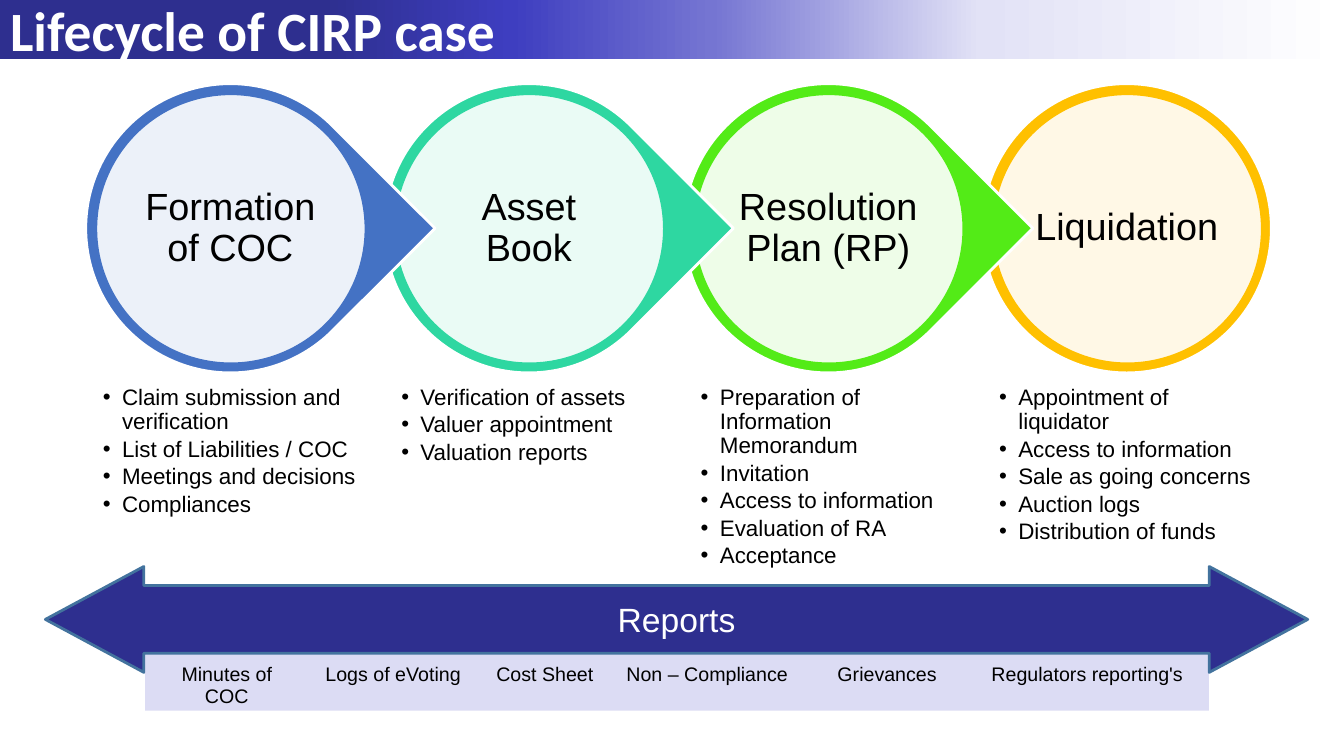
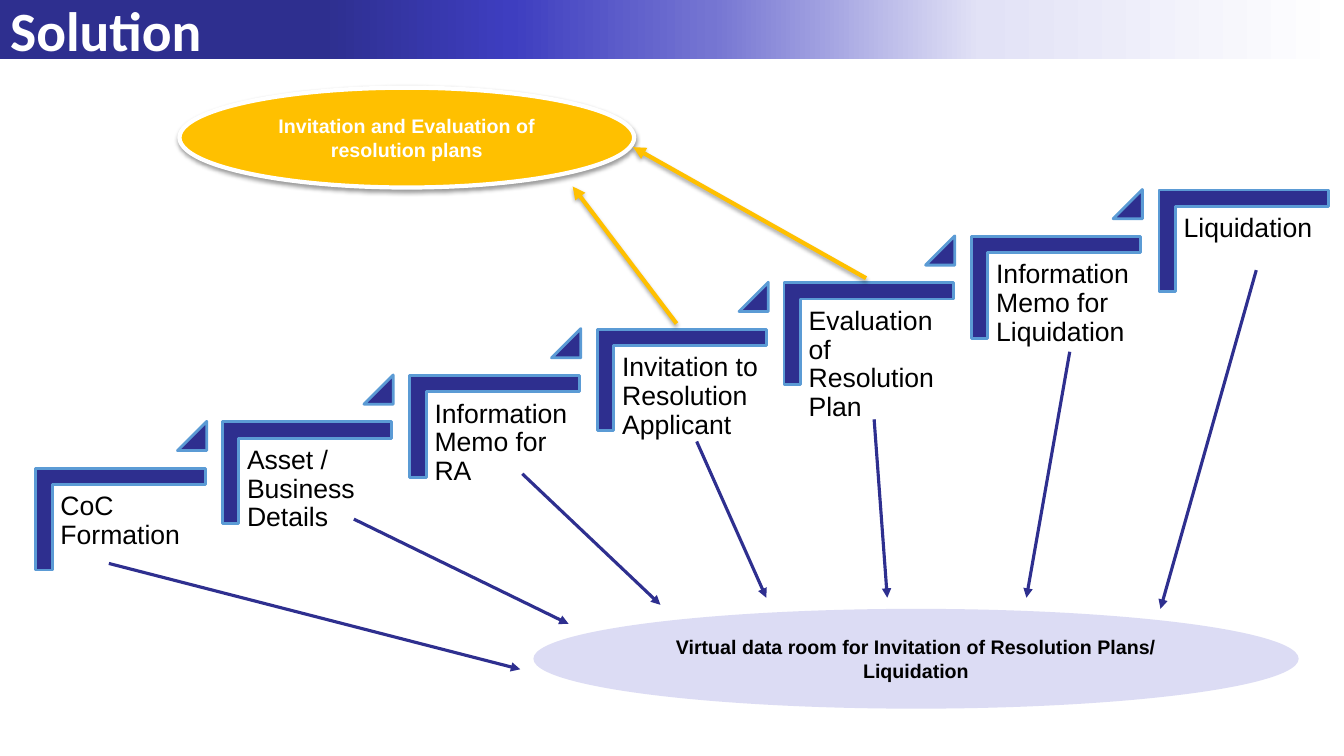
import lxml.etree
import pptx
import pptx.dml.color
import pptx.enum.shapes
import pptx.enum.text
import pptx.oxml.ns
import pptx.util

SHAPES = pptx.enum.shapes.MSO_SHAPE
ALIGN = pptx.enum.text.PP_ALIGN
ANCHOR = pptx.enum.text.MSO_ANCHOR
NAVY, LILAC, GOLD = "2E2F8F", "DCDCF4", "FFC000"
WHITE, BLACK, SKY = "FFFFFF", "000000", "5B9BD5"


def px(length):
    return pptx.util.Emu(length * 9144)


def colour(code):
    return pptx.dml.color.RGBColor.from_string(code)


def add_xml(parent, tag, **attributes):
    return lxml.etree.SubElement(parent, pptx.oxml.ns.qn(tag), attributes)


class Deck:
    body_font = "Arial"
    title_font = "Calibri"
    band_stops = [(0, WHITE), (27, "E2E2F6"), (47, "7575D2"),
                  (62, "3E3EC0"), (76, NAVY), (100, NAVY)]
    no_grid = "{2D5ABB26-0587-4C30-8999-92F81FD0307C}"

    def __init__(self):
        self.deck = pptx.Presentation()
        self.deck.slide_width = px(1333)
        self.deck.slide_height = px(750)
        self.page = None

    def add_page(self, layout, title):
        self.page = self.deck.slides.add_slide(self.deck.slide_layouts.get_by_name(layout))
        if len(self.deck.slides) == 1:
            self.add_master_band()
        box = self.page.shapes.title
        self.place(box, 0, 0, 1185, 66)
        self.set_text(box.text_frame, [title], 39.6, WHITE, bold=True, font=self.title_font,
                      anchor=ANCHOR.MIDDLE, inset=(10, 5), spacing=0.9)

    def add_master_band(self):
        band = self.add_shape(SHAPES.RECTANGLE, 0, 0, 1333, 59, NAVY)
        band.fill.gradient()
        band.fill.gradient_angle = 180
        stops = next(band.element.iter(pptx.oxml.ns.qn("a:gsLst")))
        stops.clear()
        for position, code in self.band_stops:
            stop = add_xml(stops, "a:gs", pos=str(position * 1000))
            add_xml(stop, "a:srgbClr", val=code)
        self.deck.slide_master.shapes.element.insert(2, band.element)

    def place(self, box, left, top, width, height):
        box.left, box.top, box.width, box.height = map(px, (left, top, width, height))

    def set_text(self, frame, texts, size, code=BLACK, bold=False, font=body_font,
                 align=ALIGN.LEFT, anchor=ANCHOR.TOP, inset=(10, 5), spacing=1.0,
                 after=0, bullet=False):
        frame.word_wrap = True
        frame.auto_size = pptx.enum.text.MSO_AUTO_SIZE.NONE
        frame.vertical_anchor = anchor
        frame.margin_left = frame.margin_right = px(inset[0])
        frame.margin_top = frame.margin_bottom = px(inset[1])
        for index, text in enumerate(texts):
            para = frame.add_paragraph() if index else frame.paragraphs[0]
            self.set_para(para, text, size, code, bold, font, align)
            para.line_spacing = spacing
            para.space_before = pptx.util.Pt(0)
            para.space_after = pptx.util.Pt(after)
            if bullet:
                properties = para._p.get_or_add_pPr()
                properties.set("marL", str(px(19)))
                properties.set("indent", str(px(-19)))
                add_xml(properties, "a:buChar", char="•")

    def set_para(self, para, text, size, code, bold, font, align):
        para.alignment = align
        span = para.add_run()
        span.text = text
        span.font.name = font
        span.font.size = pptx.util.Pt(size)
        span.font.bold = bold
        span.font.color.rgb = colour(code)

    def add_shape(self, kind, left, top, width, height, fill, line=None, weight=2,
                  turn=0, adjust=(), alpha=None):
        box = self.page.shapes.add_shape(kind, *map(px, (left, top, width, height)))
        box.shadow.inherit = False
        box.rotation = turn
        for index, value in enumerate(adjust):
            box.adjustments[index] = value
        box.fill.solid()
        box.fill.fore_color.rgb = colour(fill)
        if alpha:
            code = box.element.spPr.find(".//" + pptx.oxml.ns.qn("a:srgbClr"))
            add_xml(code, "a:alpha", val=str(alpha * 1000))
        if line:
            box.line.color.rgb = colour(line)
            box.line.width = pptx.util.Pt(weight)
        else:
            box.line.fill.background()
        return box

    def add_label(self, left, top, width, height, text, size, **style):
        box = self.page.shapes.add_textbox(*map(px, (left, top, width, height)))
        self.set_text(box.text_frame, [text], size, spacing=0.9, **style)

    def add_list(self, box, left, top, width, height, items):
        self.place(box, left, top, width, height)
        self.set_text(box.text_frame, items, 16, inset=(7, 7), spacing=0.9,
                      after=2.4, bullet=True)

    def add_caption(self, box, text, size, code, bold=False):
        self.set_text(box.text_frame, [text], size, code, bold,
                      align=ALIGN.CENTER, anchor=ANCHOR.MIDDLE)

    def add_row(self, left, top, height, widths, texts):
        frame = self.page.shapes.add_table(
            1, len(texts), *map(px, (left, top, sum(widths), height)))
        table = frame.table
        table.first_row = table.horz_banding = False
        next(frame.element.iter(pptx.oxml.ns.qn("a:tableStyleId"))).text = self.no_grid
        for index, (width, text) in enumerate(zip(widths, texts)):
            table.columns[index].width = px(width)
            cell = table.cell(0, index)
            cell.fill.background()
            self.set_para(cell.text_frame.paragraphs[0], text, 14, BLACK, False,
                          self.body_font, ALIGN.CENTER)

    def add_arrow(self, start, end, code, weight):
        arrow = self.page.shapes.add_connector(
            pptx.enum.shapes.MSO_CONNECTOR.STRAIGHT, *map(px, start + end))
        arrow.line.color.rgb = colour(code)
        arrow.line.width = pptx.util.Pt(weight)
        properties = arrow.element.spPr
        add_xml(properties.find(pptx.oxml.ns.qn("a:ln")), "a:tailEnd", type="triangle")
        add_xml(properties, "a:effectLst")
        return arrow

    def add_shadow(self, box, alpha, distance):
        effects = box.element.spPr.find(pptx.oxml.ns.qn("a:effectLst"))
        shadow = add_xml(effects, "a:outerShdw", blurRad=str(pptx.util.Pt(3.1)),
                         dist=str(pptx.util.Pt(distance)), dir="5400000", rotWithShape="0")
        add_xml(add_xml(shadow, "a:srgbClr", val=BLACK), "a:alpha", val=str(alpha * 1000))


def build_lifecycle(deck):
    stages = [
        ("Formation of COC", "4472C4",
         ["Claim submission and verification", "List of Liabilities / COC",
          "Meetings and decisions", "Compliances"]),
        ("Asset Book", "2ED7A1",
         ["Verification of assets", "Valuer appointment", "Valuation reports"]),
        ("Resolution Plan (RP)", "53EB17",
         ["Preparation of Information Memorandum", "Invitation",
          "Access to information", "Evaluation of RA", "Acceptance"]),
        ("Liquidation", GOLD,
         ["Appointment of liquidator", "Access to information",
          "Sale as going concerns", "Auction logs", "Distribution of funds"]),
    ]
    reports = ["Minutes of COC", "Logs of eVoting", "Cost Sheet",
               "Non – Compliance", "Grievances", "Regulators reporting's"]
    deck.add_page("Comparison", "Lifecycle of CIRP case")
    bodies = list(deck.page.placeholders)[1:]
    deck.add_shape(SHAPES.RECTANGLE, 144, 647, 1055, 58, LILAC)
    for index, (name, code, items) in reversed(list(enumerate(stages))):
        left = 85 + 593 * index // 2
        last = index == len(stages) - 1
        deck.add_shape(SHAPES.OVAL if last else SHAPES.TEAR, left, 83, 287, 287, code,
                       WHITE, turn=0 if last else 45)
        deck.add_shape(SHAPES.OVAL, left + 10, 93, 268, 268, WHITE, code, alpha=90)
        deck.add_label(left + 48, 131, 191, 191, name, 27, align=ALIGN.CENTER,
                       anchor=ANCHOR.MIDDLE, inset=(4, 4))
        deck.add_list(bodies[index], left + 10, 376, 268, 157, items)
    arrow = deck.add_shape(SHAPES.LEFT_RIGHT_ARROW, 45, 562, 1252, 105, NAVY, "43739E",
                           adjust=(0.64, 0.93))
    deck.add_caption(arrow, "Reports", 24, WHITE)
    deck.add_row(146, 653, 47, [158, 172, 129, 193, 164, 233], reports)


def build_solution(deck):
    steps = ["CoC Formation", "Asset / Business Details", "Information Memo for RA",
             "Invitation to Resolution Applicant", "Evaluation of Resolution Plan",
             "Information Memo for Liquidation", "Liquidation"]
    plan_arrows = [((859, 276), (628, 146)), ((671, 321), (568, 185))]
    room_arrows = [((108, 559), (516, 664)), ((351, 515), (564, 619)),
                   ((518, 470), (655, 600)), ((691, 438), (760, 593)),
                   ((867, 416), (880, 593)), ((1061, 349), (1018, 593)),
                   ((1246, 268), (1151, 604))]
    deck.add_page("Title Only", "Solution")
    plans = deck.add_shape(SHAPES.OVAL, 178, 87, 451, 99, GOLD, WHITE, 3)
    deck.add_shadow(plans, 38, 1.6)
    deck.add_caption(plans, "Invitation and Evaluation of resolution plans", 14, WHITE, True)
    room = deck.add_shape(SHAPES.OVAL, 529, 604, 759, 99, LILAC)
    deck.add_caption(room, "Virtual data room for Invitation of Resolution Plans/ Liquidation",
                     14, BLACK, True)
    for index, name in enumerate(steps):
        left, top = 69 + 1857 * index // 10, 431 - 46 * index
        deck.add_shape(SHAPES.CORNER, left, top, 101, 168, NAVY, SKY, turn=90,
                       adjust=(0.16, 0.16))
        deck.add_label(left - 17, top + 50, 152, 133, name, 19, inset=(8, 8))
        if index < len(steps) - 1:
            deck.add_shape(SHAPES.ISOSCELES_TRIANGLE, left + 107, top - 13, 29, 29,
                           NAVY, SKY, adjust=(1,))
    for start, end in plan_arrows:
        deck.add_shadow(deck.add_arrow(start, end, GOLD, 3), 35, 1.8)
    for start, end in room_arrows:
        deck.add_arrow(start, end, NAVY, 2.25)


def main():
    style = Deck()
    build_lifecycle(style)
    build_solution(style)
    style.deck.save("out.pptx")


if __name__ == "__main__":
    main()
